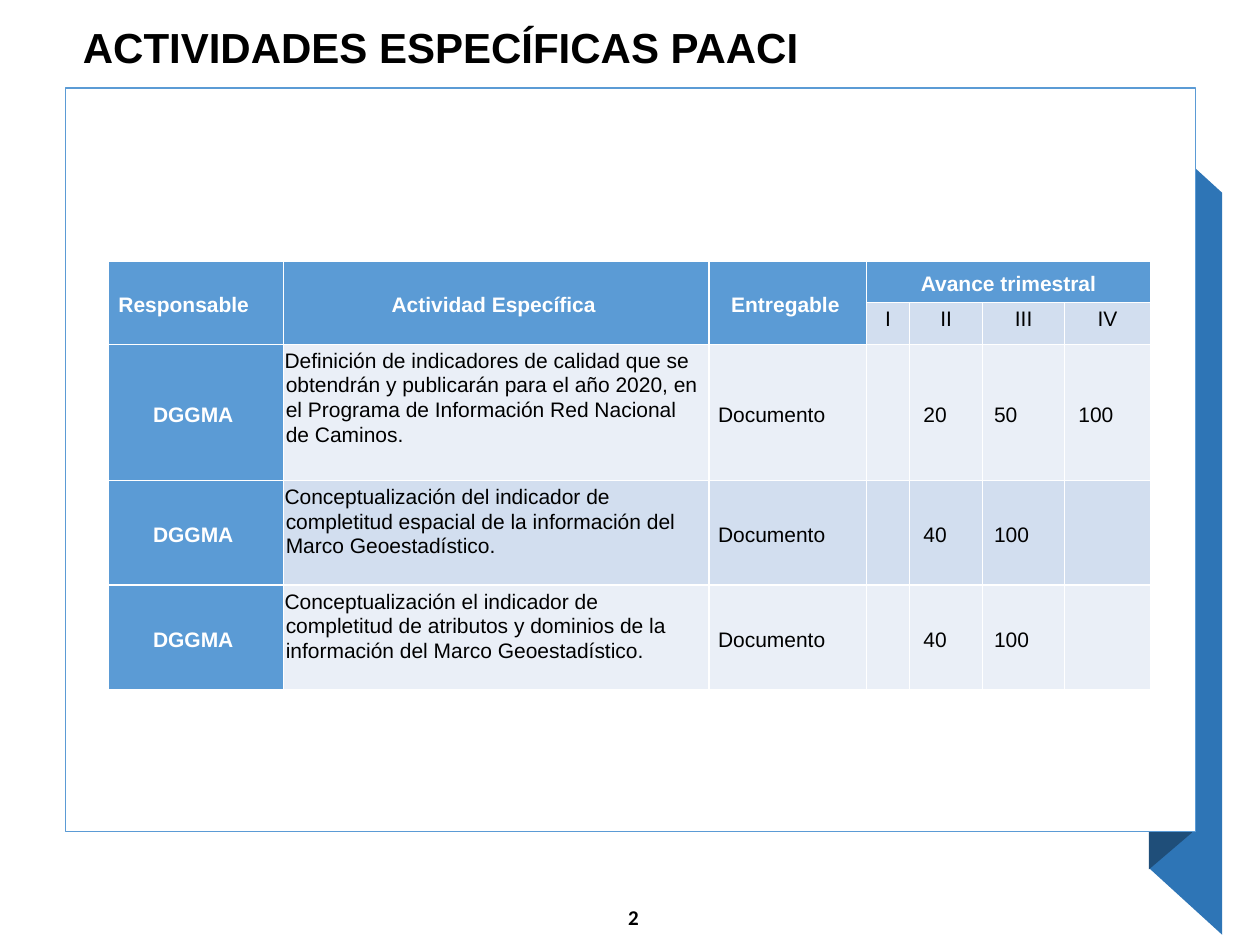
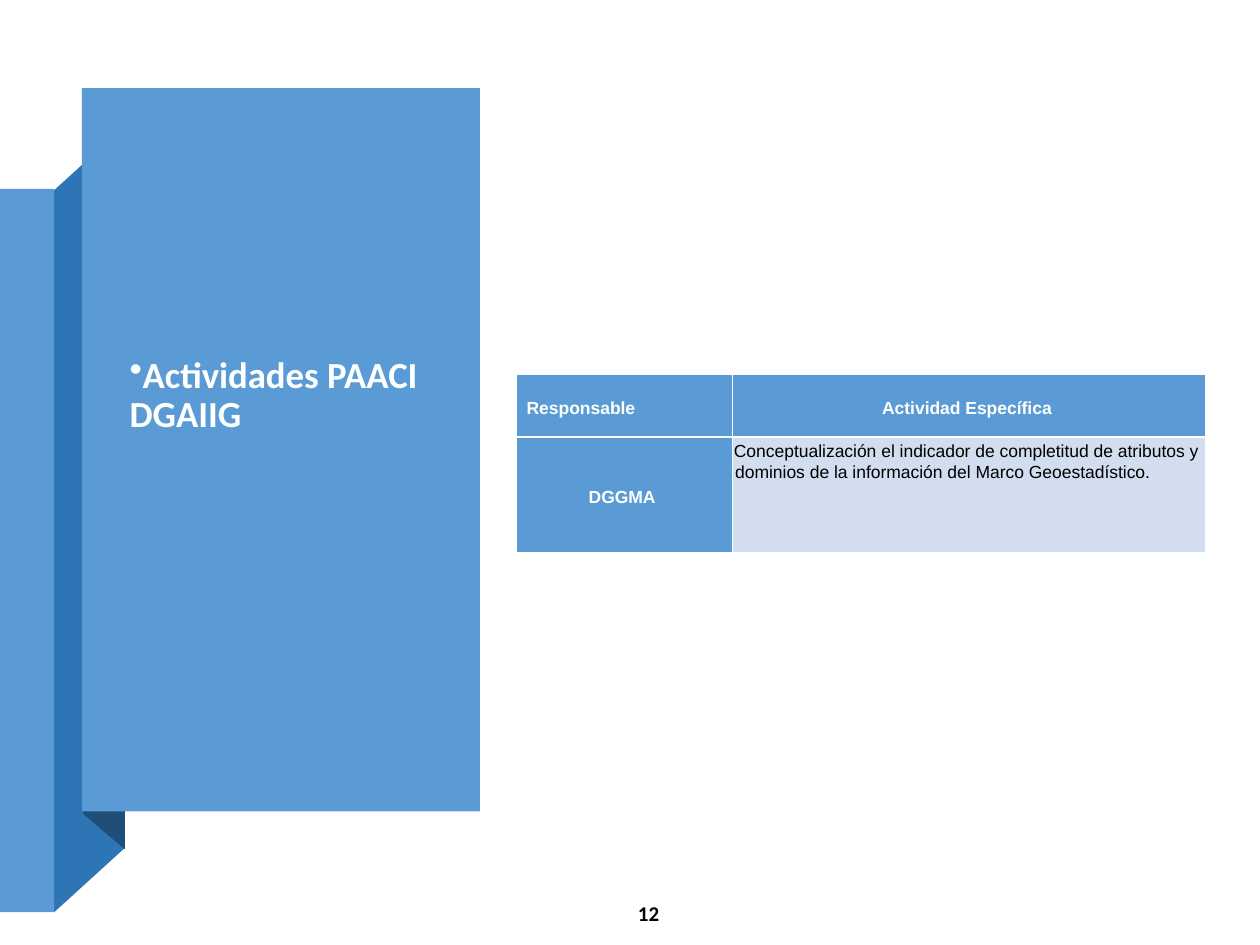
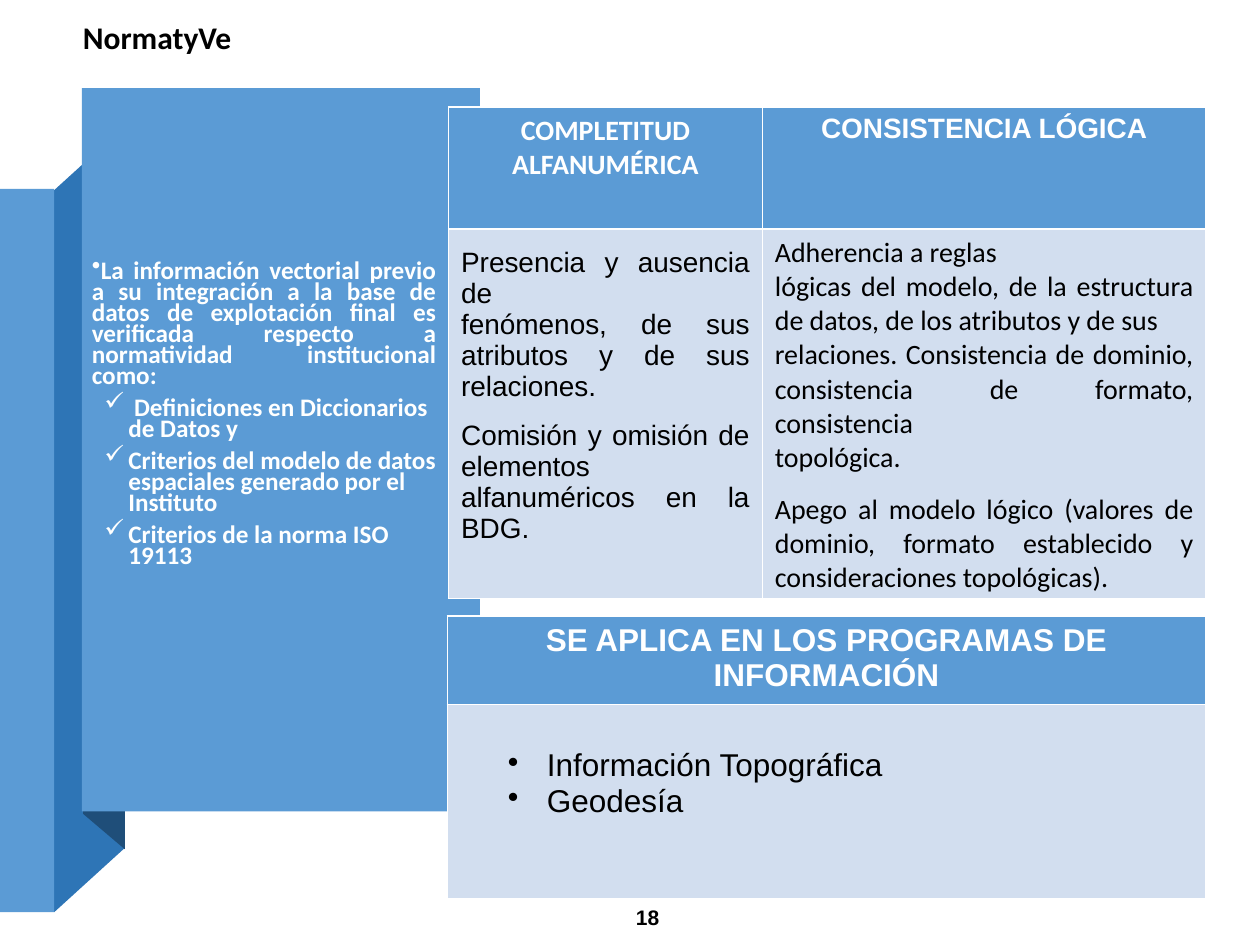
from dataclasses import dataclass, replace

from lxml.etree import SubElement
from pptx import Presentation
from pptx.dml.color import RGBColor
from pptx.enum.shapes import MSO_SHAPE
from pptx.enum.text import MSO_ANCHOR, MSO_AUTO_SIZE, PP_ALIGN
from pptx.oxml.ns import qn
from pptx.util import Pt


@dataclass(frozen=True)
class Theme:
    blue: str = "5B9BD5"
    ribbon: str = "2E75B6"
    fold: str = "1F4E79"
    band: str = "D2DEEF"
    pale: str = "EAEFF7"
    white: str = "FFFFFF"
    panel_text: str = "FEFFFF"
    black: str = "000000"
    sans: str = "Arial"
    body: str = "Calibri"
    title: float = 24
    panel_title: float = 21
    heading: float = 18
    large: float = 16
    panel_body: float = 14.4
    normal: float = 12
    small: float = 10


THEME = Theme()


@dataclass(frozen=True)
class Style:
    size: float
    font: str = THEME.sans
    color: str = THEME.black
    bold: bool = False
    align: PP_ALIGN = PP_ALIGN.LEFT
    left: float = 0
    indent: float = 0
    line: float = 1.0
    before: float = 0
    after: float = 0
    bullet: str = ""


@dataclass(frozen=True)
class Cell:
    lines: tuple = ()
    fill: str = THEME.band
    anchor: MSO_ANCHOR = MSO_ANCHOR.TOP
    margins: tuple = (7.2, 3.6, 7.2, 3.6)


COMPACT = (0.72, 2.16, 3.6, 0)
MIDDLE = MSO_ANCHOR.MIDDLE


def write(text_frame, lines):
    text_frame.text = "\n".join(text for text, style in lines)
    for paragraph, (text, style) in zip(text_frame.paragraphs, lines):
        properties = paragraph._p.get_or_add_pPr()
        properties.set("marL", str(Pt(style.left)))
        properties.set("indent", str(Pt(style.indent)))
        if style.bullet:
            SubElement(properties, qn("a:buChar")).set("char", style.bullet)
        paragraph.alignment = style.align
        paragraph.line_spacing = style.line
        paragraph.space_before = Pt(style.before)
        paragraph.space_after = Pt(style.after)
        for run in paragraph.runs:
            run.font.size = Pt(style.size)
            run.font.name = style.font
            run.font.bold = style.bold
            run.font.color.rgb = RGBColor.from_string(style.color)


def add_text(slide, box, lines, wrap=True):
    shape = slide.shapes.add_textbox(*map(Pt, box))
    shape.text_frame.word_wrap = wrap
    write(shape.text_frame, lines)
    return shape.text_frame


def add_title(slide, box, text, style, wrap=True):
    text_frame = add_text(slide, box, [(text, style)], wrap)
    text_frame.auto_size = MSO_AUTO_SIZE.SHAPE_TO_FIT_TEXT


def add_page_number(slide, number, width, height, inset, font=THEME.body):
    style = Style(THEME.normal, font, bold=True, align=PP_ALIGN.RIGHT)
    text_frame = add_text(slide, (352.8, 514.8, width, height), [(number, style)])
    text_frame.margin_left = 0
    text_frame.margin_right = Pt(inset)
    text_frame.vertical_anchor = MIDDLE


def paint(shape, fill, line=None):
    shape.shadow.inherit = False
    shape.fill.solid()
    shape.fill.fore_color.rgb = RGBColor.from_string(fill)
    if line:
        shape.line.color.rgb = RGBColor.from_string(line)
        shape.line.width = Pt(1)
    else:
        shape.line.fill.background()


def add_rectangle(slide, box, fill, line=None):
    paint(slide.shapes.add_shape(MSO_SHAPE.RECTANGLE, *map(Pt, box)), fill, line)


def add_outline(slide, points, fill):
    start, *others = [(Pt(x), Pt(y)) for x, y in points]
    builder = slide.shapes.build_freeform(*start)
    builder.add_line_segments(others, close=True)
    paint(builder.convert_to_shape(), fill)


def add_right_ribbon(slide):
    add_outline(slide, [(698.4, 534.2), (656.6, 496.1), (656.6, 72), (698.4, 110.2)], THEME.ribbon)
    add_outline(slide, [(681.1, 475.9), (656.6, 496.8), (656.6, 72), (681.1, 50.4)], THEME.fold)
    add_rectangle(slide, (37.4, 50.4, 645.8, 424.8), THEME.white, THEME.blue)


def add_left_panel(slide):
    add_outline(slide, [(31, 521.3), (71.3, 484.6), (71.3, 72), (31, 108.7)], THEME.ribbon)
    add_rectangle(slide, (0, 108, 31, 413.3), THEME.blue)
    add_outline(slide, [(47.5, 465.1), (71.3, 485.3), (71.3, 71.3), (47.5, 50.4)], THEME.fold)
    add_rectangle(slide, (46.8, 50.4, 227.5, 413.3), THEME.blue)


def add_grid(slide, left, top, widths, heights, rows, merges=()):
    table = slide.shapes.add_table(
        len(heights), len(widths), Pt(left), Pt(top), Pt(sum(widths)), Pt(sum(heights))
    ).table
    for column, width in zip(table.columns, widths):
        column.width = Pt(width)
    for row, height in zip(table.rows, heights):
        row.height = Pt(height)
    for row, contents in zip(table.rows, rows):
        for cell, content in zip(row.cells, contents):
            cell.fill.solid()
            cell.fill.fore_color.rgb = RGBColor.from_string(content.fill)
            cell.vertical_anchor = content.anchor
            cell.margin_left, cell.margin_top, cell.margin_right, cell.margin_bottom = map(
                Pt, content.margins
            )
            if content.lines:
                write(cell.text_frame, content.lines)
    for first, last in merges:
        table.cell(*first).merge(table.cell(*last))


def compact_cell(text, size, fill, left=0.72, align=PP_ALIGN.LEFT, anchor=MIDDLE):
    if not text:
        return Cell((), fill, anchor, COMPACT)
    strong = fill == THEME.blue
    color = THEME.white if strong else THEME.black
    style = Style(size, color=color, bold=strong, align=align, left=left, indent=-0.72, line=1.05)
    return Cell(((text, style),), fill, anchor, COMPACT)


def header_cell(text, size, left=0.72, align=PP_ALIGN.CENTER):
    return compact_cell(text, size, THEME.blue, left, align)


def activity_cells(text, size, fill):
    return [
        header_cell("DGGMA", size),
        compact_cell(text, size, fill, anchor=MSO_ANCHOR.TOP),
    ]


def activity_headers(size):
    return [
        header_cell("Responsable", size, 5.76, PP_ALIGN.LEFT),
        header_cell("Actividad Específica", size),
    ]


ATTRIBUTES_ACTIVITY = (
    "Conceptualización el indicador de completitud de atributos y dominios "
    "de la información del Marco Geoestadístico."
)


def build_activities(slide):
    add_right_ribbon(slide)
    size = THEME.normal
    blank = header_cell("", size)
    rows = [
        activity_headers(size)
        + [header_cell("Entregable", size), header_cell("Avance trimestral", size, 3.6)]
        + [blank] * 3,
        [blank] * 3
        + [
            compact_cell(quarter, size, THEME.band, 3.6, PP_ALIGN.CENTER, MSO_ANCHOR.TOP)
            for quarter in ("I", "II", "III", "IV")
        ],
    ]
    activities = [
        (
            "Definición de indicadores de calidad que se obtendrán y publicarán para el año 2020, "
            "en el Programa de Información Red Nacional de Caminos.",
            ("", "20", "50", "100"),
        ),
        (
            "Conceptualización del indicador de completitud espacial de la información "
            "del Marco Geoestadístico.",
            ("", "40", "100", ""),
        ),
        (ATTRIBUTES_ACTIVITY, ("", "40", "100", "")),
    ]
    for index, (activity, progress) in enumerate(activities):
        fill = THEME.band if index % 2 else THEME.pale
        rows.append(
            activity_cells(activity, size, fill)
            + [compact_cell("Documento", size, fill, 5.04, PP_ALIGN.JUSTIFY)]
            + [
                compact_cell(value, size, fill, left)
                for value, left in zip(progress, (7.92, 7.92, 6.48, 7.92))
            ]
        )
    merges = [((0, column), (1, column)) for column in range(3)] + [((0, 3), (0, 6))]
    widths = (100, 243.4, 90, 24.5, 41.8, 46.8, 49)
    add_grid(slide, 61.9, 149.2, widths, (23.8, 23.8, 77.8, 59.8, 59.8), rows, merges)
    add_page_number(slide, "2", 13.7, 18, 1.5)
    add_title(
        slide,
        (40.3, 8.6, 427.7, 36),
        "ACTIVIDADES ESPECÍFICAS PAACI",
        Style(THEME.title, bold=True),
        wrap=False,
    )


def build_section(slide):
    add_left_panel(slide)
    style = Style(
        THEME.panel_title, THEME.body, THEME.panel_text, True,
        indent=-18, line=0.9, after=6, bullet="•",
    )
    add_text(slide, (67, 200.2, 189.4, 235.4), [("Actividades PAACI DGAIIG", style)])
    rows = [
        activity_headers(THEME.small),
        activity_cells(ATTRIBUTES_ACTIVITY, THEME.small, THEME.band),
    ]
    add_grid(slide, 295.2, 213.8, (123.5, 270.5), (36, 66.2), rows)
    add_page_number(slide, "12", 31, 14.4, 7.2)


def build_standards(slide):
    add_left_panel(slide)
    intro = Style(
        THEME.panel_body, THEME.body, THEME.panel_text, True, PP_ALIGN.JUSTIFY,
        indent=-18, line=0.7, after=6, bullet="•",
    )
    check = replace(intro, align=PP_ALIGN.LEFT, left=20.9, indent=-13.7, bullet="✓")
    criteria = [
        (
            "La información vectorial previo a su integración a la base de datos de explotación "
            "final es verificada respecto a normatividad institucional como:",
            intro,
        ),
        (" Definiciones en Diccionarios de Datos y", check),
        ("Criterios del modelo de datos espaciales generado por el Instituto", check),
        ("Criterios de la norma ISO 19113", check),
    ]
    add_text(slide, (45.4, 146.2, 211, 209.5), criteria)

    heading = Style(THEME.large, color=THEME.white, bold=True, align=PP_ALIGN.CENTER)
    sans = Style(THEME.large, align=PP_ALIGN.JUSTIFY)
    body = replace(sans, font=THEME.body)
    completeness = (
        ("Presencia y ausencia de", sans),
        ("fenómenos, de sus atributos y de sus relaciones.", sans),
        ("Comisión y omisión de elementos alfanuméricos en la BDG.", replace(sans, before=10)),
    )
    consistency = (
        ("Adherencia a reglas", body),
        ("lógicas del modelo, de la estructura de datos, de los atributos y de sus", body),
        ("relaciones. Consistencia de dominio, consistencia de formato, consistencia", body),
        ("topológica.", body),
        (
            "Apego al modelo lógico (valores de dominio, formato establecido y "
            "consideraciones topológicas).",
            replace(body, before=10),
        ),
    )
    raised = (7.2, 3.6, 7.2, 24)
    rows = [
        [
            Cell((("COMPLETITUD ALFANUMÉRICA", replace(heading, font=THEME.body)),), THEME.blue),
            Cell((("CONSISTENCIA LÓGICA", heading),), THEME.blue),
        ],
        [Cell(completeness, anchor=MIDDLE, margins=raised), Cell(consistency)],
    ]
    add_grid(slide, 256.3, 61.2, (179.3, 253.7), (69.8, 211), rows)

    programs_heading = replace(heading, size=THEME.heading)
    item = Style(THEME.heading, left=49.7, indent=-22.3, bullet="•")
    programs = (("Información Topográfica", item), ("Geodesía", item))
    rows = [
        [Cell((("SE APLICA EN LOS PROGRAMAS DE INFORMACIÓN", programs_heading),), THEME.blue)],
        [Cell(programs, anchor=MIDDLE, margins=raised)],
    ]
    add_grid(slide, 255.6, 352.1, (433.4,), (42.5, 110.9), rows)
    add_page_number(slide, "18", 31, 18.7, 7.2, THEME.sans)
    add_title(
        slide,
        (40.3, 6.5, 679.7, 28.8),
        "NormatyVe",
        Style(THEME.heading, THEME.body, bold=True),
    )


def main():
    presentation = Presentation()
    presentation.slide_width = Pt(720)
    presentation.slide_height = Pt(540)
    for build in (build_activities, build_section, build_standards):
        build(presentation.slides.add_slide(presentation.slide_layouts[6]))
    presentation.save("out.pptx")


if __name__ == "__main__":
    main()
